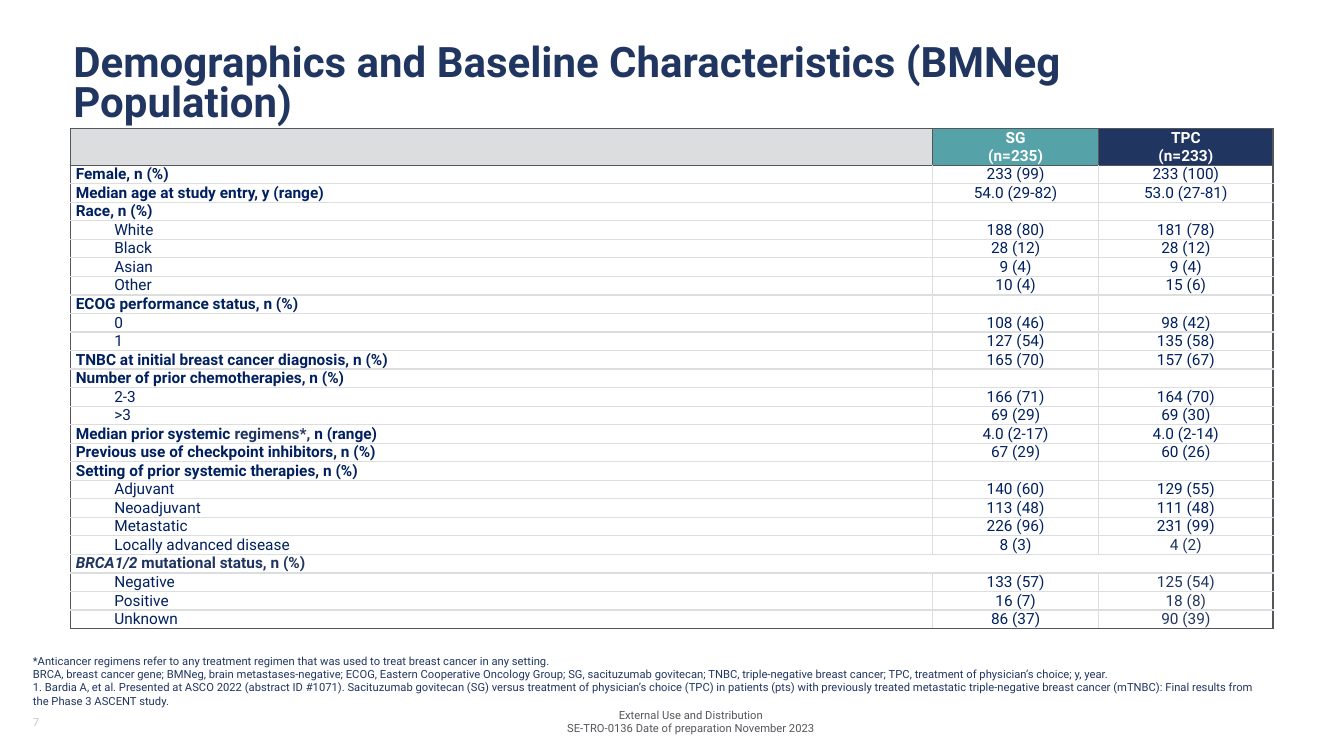
from typing import NamedTuple, Optional

from lxml.etree import SubElement
from pptx import Presentation
from pptx.dml.color import RGBColor
from pptx.enum.text import MSO_ANCHOR as Anchor, PP_ALIGN as Align
from pptx.oxml.ns import qn
from pptx.util import Cm, Pt

FONT = "Roboto"
NAVY, INK, TEAL = "203661", "002060", "55A2A8"
GREY, PALE, LIGHT, WHITE = "54565B", "C6CAC6", "DCDDDF", "FFFFFF"


class Span(NamedTuple):
    text: str
    color: str = INK
    italic: bool = False


class Row(NamedTuple):
    label: str | tuple[Span, ...]
    sg: str = ""
    tpc: str = ""
    indented: bool = False
    tpc_color: str = INK
    merged: bool = False


class TextBlock(NamedTuple):
    box: tuple[float, float, float, float]
    lines: tuple[str, ...]
    size: int
    color: str
    bold: bool = False
    align: Align = Align.LEFT
    anchor: Anchor = Anchor.MIDDLE
    line_spacing: Optional[float] = None
    bottom_inset: float = 0.13


def sub(label: str, sg: str, tpc: str, tpc_color: str = INK) -> Row:
    """An indented row below a group heading."""
    return Row(label, sg, tpc, True, tpc_color)


ROWS = (
    Row("Female, n (%)", "233 (99)", "233 (100)"),
    Row("Median age at study entry, y (range)", "54.0 (29-82)", "53.0 (27-81)"),
    Row("Race, n (%)"),
    sub("White", "188 (80)", "181 (78)"),
    sub("Black", "28 (12)", "28 (12)"),
    sub("Asian", "9 (4)", "9 (4)"),
    sub("Other", "10 (4)", "15 (6)"),
    Row("ECOG performance status, n (%)"),
    sub("0", "108 (46)", "98 (42)"),
    sub("1", "127 (54)", "135 (58)"),
    Row("TNBC at initial breast cancer diagnosis, n (%)", "165 (70)", "157 (67)"),
    Row("Number of prior chemotherapies, n (%)"),
    sub("2-3", "166 (71)", "164 (70)"),
    sub(">3", "69 (29)", "69 (30)"),
    Row((Span("Median prior systemic "), Span("regimens*, ", NAVY), Span("n (range)")),
        "4.0 (2-17)", "4.0 (2-14)"),
    Row("Previous use of checkpoint inhibitors, n (%)", "67 (29)", "60 (26)"),
    Row("Setting of prior systemic therapies, n (%)"),
    sub("Adjuvant", "140 (60)", "129 (55)"),
    sub("Neoadjuvant", "113 (48)", "111 (48)"),
    sub("Metastatic", "226 (96)", "231 (99)"),
    sub("Locally advanced disease", "8 (3)", "4 (2)", NAVY),
    Row((Span("BRCA1/2 ", NAVY, True), Span("mutational status, n (%)", NAVY)), merged=True),
    sub("Negative", "133 (57)", "125 (54)", NAVY),
    sub("Positive", "16 (7)", "18 (8)", NAVY),
    sub("Unknown", "86 (37)", "90 (39)", NAVY),
)
HEADERS = (("", LIGHT), ("SG\v(n=235)", TEAL), ("TPC\v(n=233)", NAVY))
COLUMN_WIDTHS = (21.72, 4.19, 4.39)
HEADER_HEIGHT, ROW_HEIGHT = 0.91, 0.45

TITLE = TextBlock((1.6, 1.02, 30.48, 2.74),
                  ("Demographics and Baseline Characteristics (BMNeg Population)",),
                  30, NAVY, bold=True, anchor=Anchor.TOP, line_spacing=0.8)
FOOTER = TextBlock((13.06, 17.78, 8.71, 0.81),
                   ("External Use and Distribution",
                    "SE-TRO-0136 Date of preparation November 2023"),
                   8, GREY, align=Align.CENTER)
SLIDE_NUMBER = TextBlock((0.58, 17.78, 7.62, 0.81), ("7",), 8, PALE)
FOOTNOTES = TextBlock(
    (0.58, 17.27, 31.5, 1.02),
    ("*Anticancer regimens refer to any treatment regimen that was used to treat breast "
     "cancer in any setting.",
     "BRCA, breast cancer gene; BMNeg, brain metastases-negative; ECOG, Eastern Cooperative "
     "Oncology Group; SG, sacituzumab govitecan; TNBC, triple-negative breast cancer; TPC, "
     "treatment of physician’s choice; y, year.",
     "1. Bardia A, et al. Presented at ASCO 2022 (abstract ID #1071). Sacituzumab govitecan "
     "(SG) versus treatment of physician’s choice (TPC) in patients (pts) with previously "
     "treated metastatic triple-negative breast cancer (mTNBC): Final results from the Phase 3 "
     "ASCENT study."),
    8, NAVY, anchor=Anchor.BOTTOM, bottom_inset=0.46)


def rgb(color: str) -> RGBColor:
    return RGBColor.from_string(color)


def style(font, size: int, color: str, bold: bool = False) -> None:
    font.name, font.size, font.bold = FONT, Pt(size), bold
    font.color.rgb = rgb(color)


def add_text(slide, block: TextBlock) -> None:
    tf = slide.shapes.add_textbox(*map(Cm, block.box)).text_frame
    tf.word_wrap = True
    tf.vertical_anchor = block.anchor
    tf.margin_bottom = Cm(block.bottom_inset)
    tf.text = "\n".join(block.lines)
    for p in tf.paragraphs:
        p.alignment = block.align
        if block.line_spacing:
            p.line_spacing = block.line_spacing
        style(p.font, block.size, block.color, block.bold)


def set_borders(cell, left: str, right: str, top: str, bottom: str) -> None:
    tc_pr = cell._tc.get_or_add_tcPr()
    for side, color in zip("LRTB", (left, right, top, bottom)):
        ln = SubElement(tc_pr, qn(f"a:ln{side}"), w=str(Pt(1)))
        SubElement(SubElement(ln, qn("a:solidFill")), qn("a:srgbClr"), val=color)


def fill_cell(cell, content: str | tuple[Span, ...], fill: str, color: str,
              bold: bool, align: Align, indented: bool = False) -> None:
    cell.fill.solid()
    cell.fill.fore_color.rgb = rgb(fill)
    cell.vertical_anchor = Anchor.MIDDLE
    cell.margin_left = cell.margin_right = Cm(0.13)
    cell.margin_top = cell.margin_bottom = 0
    p = cell.text_frame.paragraphs[0]
    p.alignment = align
    if indented:
        p._p.get_or_add_pPr().set("marL", str(Cm(0.97)))
    if isinstance(content, str):
        p.text = content
        style(p.font, 11, color, bold)
    else:
        for span in content:
            r = p.add_run()
            r.text = span.text
            style(r.font, 11, span.color, bold)
            r.font.italic = span.italic
    if not content:
        SubElement(p._p, qn("a:endParaRPr"), sz="1100")


def add_characteristics(slide) -> None:
    frame = slide.shapes.add_table(len(ROWS) + 1, len(HEADERS), Cm(1.78), Cm(3.23),
                                   Cm(sum(COLUMN_WIDTHS)),
                                   Cm(HEADER_HEIGHT + ROW_HEIGHT * len(ROWS)))
    table = frame.table
    table.first_row = table.horz_banding = False
    for column, width in zip(table.columns, COLUMN_WIDTHS):
        column.width = Cm(width)
    for i, table_row in enumerate(table.rows):
        table_row.height = Cm(ROW_HEIGHT if i else HEADER_HEIGHT)

    for j, (text, fill) in enumerate(HEADERS):
        cell = table.cell(0, j)
        set_borders(cell, GREY, GREY, GREY, GREY)
        fill_cell(cell, text, fill, WHITE, True, Align.CENTER)

    last = len(HEADERS) - 1
    for i, row in enumerate(ROWS, 1):
        if row.merged:
            table.cell(i, 0).merge(table.cell(i, last))
        for j, content in enumerate((row.label, row.sg, row.tpc)):
            cell = table.cell(i, j)
            if cell.is_spanned:
                continue
            set_borders(cell,
                        left=LIGHT if j else GREY,
                        right=GREY if j == last or row.merged else LIGHT,
                        top=GREY if i == 1 else LIGHT,
                        bottom=GREY if i == len(ROWS) else LIGHT)
            fill_cell(cell, content, WHITE,
                      color=row.tpc_color if j == last else INK,
                      bold=j == 0 and not row.indented,
                      align=Align.CENTER if j else Align.LEFT,
                      indented=j == 0 and row.indented)


def main() -> None:
    prs = Presentation()
    prs.slide_width, prs.slide_height = Cm(33.87), Cm(19.05)
    slide = prs.slides.add_slide(prs.slide_layouts[6])
    for block in (FOOTER, TITLE, SLIDE_NUMBER):
        add_text(slide, block)
    add_characteristics(slide)
    add_text(slide, FOOTNOTES)
    prs.save("out.pptx")


if __name__ == "__main__":
    main()
